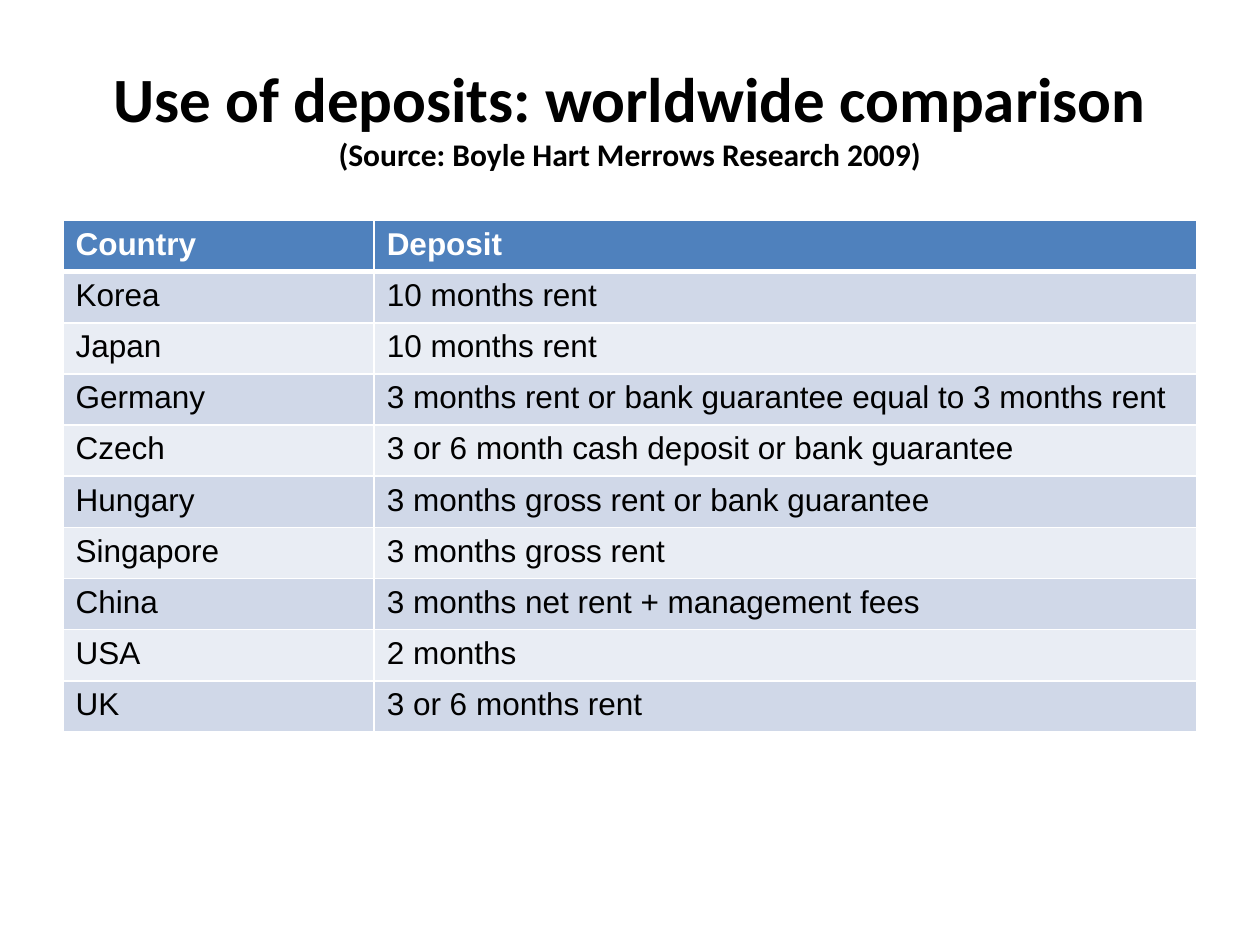
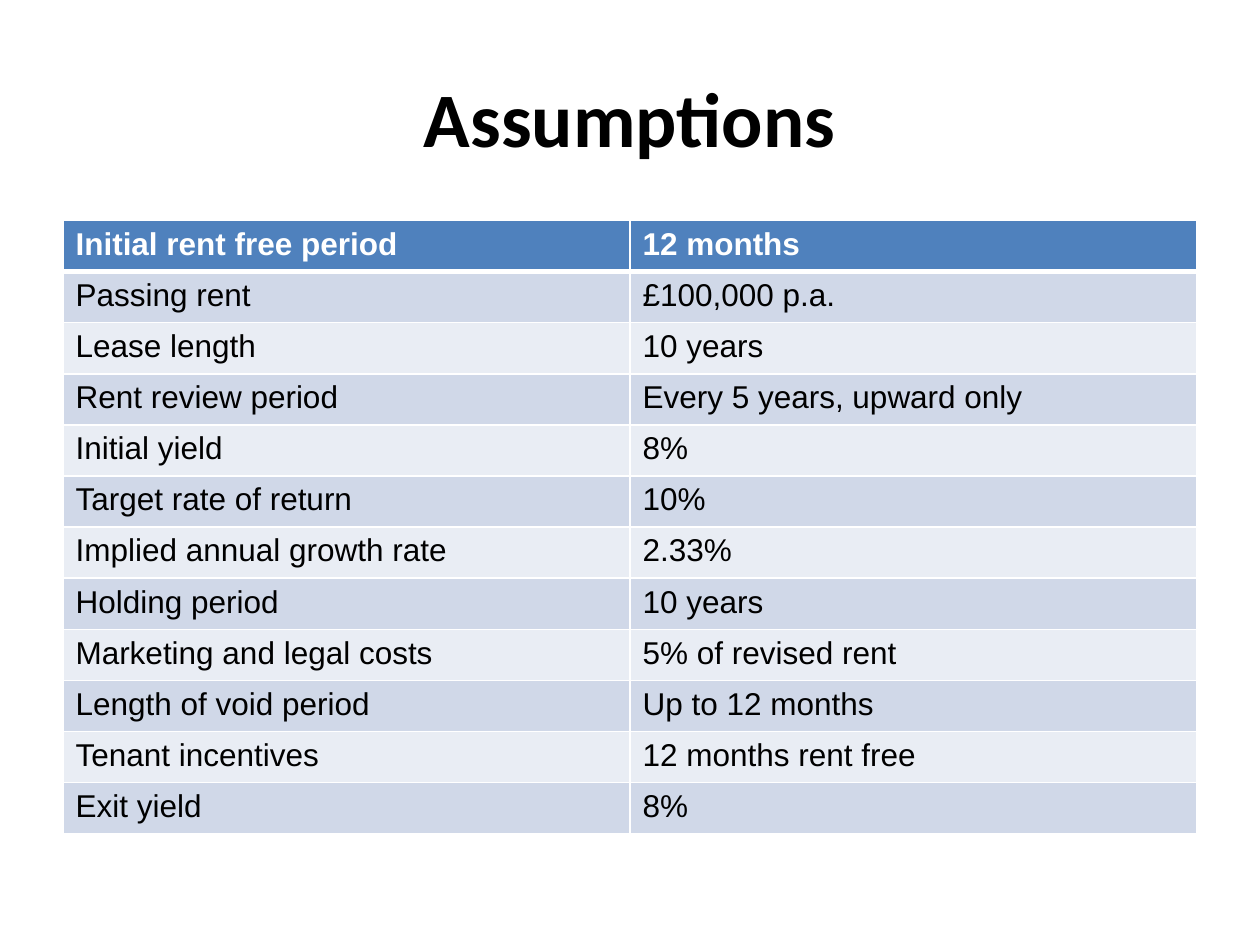
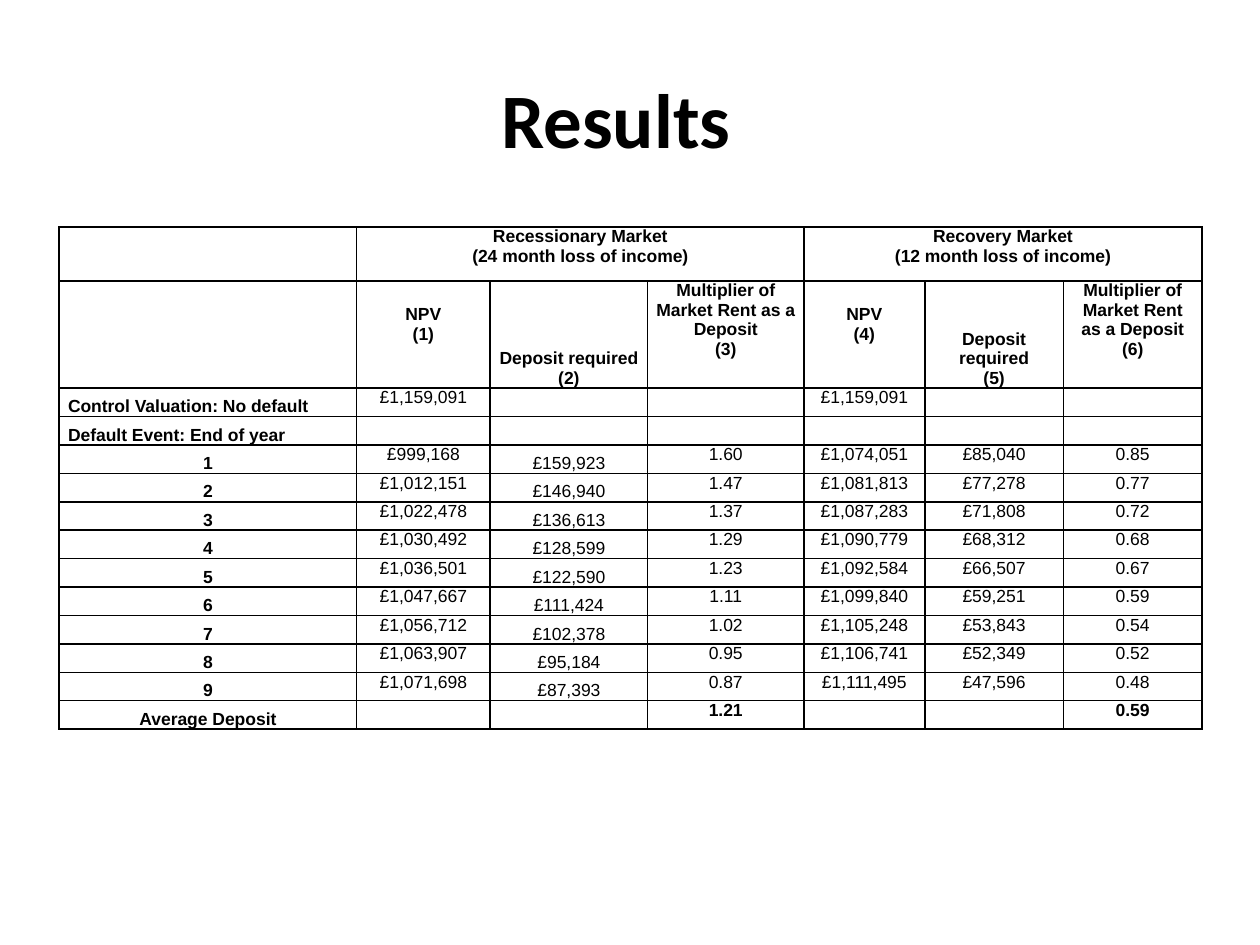
from dataclasses import dataclass

from lxml import etree
from pptx import Presentation
from pptx import util as u
from pptx.dml.color import RGBColor
from pptx.enum import text
from pptx.oxml import ns


@dataclass(frozen=True)
class Theme:
    title_font: str = "Calibri"
    body_font: str = "Arial"
    ink: str = "000000"
    paper: str = "FFFFFF"
    header: str = "4F81BD"
    bands: tuple = ("D0D8E8", "E9EDF4")
    title_size: int = 44
    long_title_size: int = 36
    source_size: int = 18
    list_size: int = 18
    result_size: int = 10
    line: int = 1
    header_line: int = 3


class Deck:
    def __init__(self, theme):
        self.theme = theme
        self.presentation = Presentation()
        self.presentation.slide_width = u.Inches(10)
        self.presentation.slide_height = u.Inches(7.5)
        self.slide = None

    def format_run(self, run, font, size, color, bold):
        run.font.name = font
        run.font.size = u.Pt(size)
        run.font.color.rgb = RGBColor.from_string(color)
        run.font.bold = bold

    def add_slide(self, title, sizes, left=0.5, top=0.3):
        layout = self.presentation.slide_layouts.get_by_name("Title Only")
        self.slide = self.presentation.slides.add_slide(layout)
        shape = self.slide.shapes.title
        shape.left, shape.top = u.Inches(left), u.Inches(top)
        shape.width, shape.height = u.Inches(9), u.Inches(1.25)
        shape.text_frame.text = title
        shape.text_frame.vertical_anchor = text.MSO_ANCHOR.MIDDLE
        paragraph = shape.text_frame.paragraphs[0]
        paragraph.alignment = text.PP_ALIGN.CENTER
        for run, size in zip(paragraph.runs, sizes):
            self.format_run(run, self.theme.title_font, size, self.theme.ink, True)

    def add_table(self, row_count, widths, left, top, height):
        frame = self.slide.shapes.add_table(
            row_count, len(widths), u.Inches(left), u.Inches(top),
            u.Inches(sum(widths)), u.Inches(height))
        for column, width in zip(frame.table.columns, widths):
            column.width = u.Inches(width)
        return frame.table

    def set_borders(self, cell, color, bottom_width=None):
        properties = cell._tc.get_or_add_tcPr()
        for side in "LRTB":
            width = bottom_width if side == "B" and bottom_width else self.theme.line
            line = etree.SubElement(properties, ns.qn(f"a:ln{side}"), w=str(u.Pt(width)))
            fill = etree.SubElement(line, ns.qn("a:solidFill"))
            etree.SubElement(fill, ns.qn("a:srgbClr"), val=color)

    def write_cell(self, cell, content, size, color, bold, alignment):
        cell.text_frame.text = content
        for paragraph in cell.text_frame.paragraphs:
            paragraph.alignment = alignment
            for run in paragraph.runs:
                self.format_run(run, self.theme.body_font, size, color, bold)
            if not paragraph.runs:
                etree.SubElement(paragraph._p, ns.qn("a:endParaRPr"), sz=str(size * 100))

    def add_banded_table(self, rows, widths, height):
        theme = self.theme
        table = self.add_table(len(rows), widths, 0.5, 1.75, height)
        for row_index, row in enumerate(rows):
            is_header = row_index == 0
            fill = theme.header if is_header else theme.bands[(row_index - 1) % 2]
            for column_index, content in enumerate(row):
                cell = table.cell(row_index, column_index)
                self.set_borders(cell, theme.paper, theme.header_line if is_header else None)
                cell.fill.solid()
                cell.fill.fore_color.rgb = RGBColor.from_string(fill)
                self.write_cell(cell, content, theme.list_size,
                                theme.paper if is_header else theme.ink,
                                is_header, text.PP_ALIGN.LEFT)

    def add_results_table(self, rows, widths, height, header_heights):
        table = self.add_table(len(rows), widths, 0.47, 1.8, height)
        body_height = (height - sum(header_heights)) / (len(rows) - len(header_heights))
        for row_index, row in enumerate(rows):
            is_header = row_index < len(header_heights)
            is_last = row_index == len(rows) - 1
            table.rows[row_index].height = u.Inches(
                header_heights[row_index] if is_header else body_height)
            for column_index, content in enumerate(row):
                cell = table.cell(row_index, column_index)
                self.set_borders(cell, self.theme.ink)
                cell.fill.background()
                cell.margin_left = cell.margin_right = u.Inches(0.07)
                cell.margin_top = u.Inches(0.19 if content.startswith("NPV") else 0)
                cell.margin_bottom = 0
                is_low = (content.startswith("Deposit required") or column_index == 0
                          or (column_index == 2 and not is_header))
                cell.vertical_anchor = text.MSO_ANCHOR.BOTTOM if is_low else text.MSO_ANCHOR.TOP
                is_label = ":" in content
                self.write_cell(cell, content, self.theme.result_size, self.theme.ink,
                                is_header or is_last or column_index == 0,
                                text.PP_ALIGN.LEFT if is_label else text.PP_ALIGN.CENTER)
        for first in (1, 4):
            table.cell(0, first).merge(table.cell(0, first + 2))


DEPOSITS = [
    ("Country", "Deposit"),
    ("Korea", "10 months rent"),
    ("Japan", "10 months rent"),
    ("Germany", "3 months rent or bank guarantee equal to 3 months rent"),
    ("Czech", "3 or 6 month cash deposit or bank guarantee"),
    ("Hungary", "3 months gross rent or bank guarantee"),
    ("Singapore", "3 months gross rent"),
    ("China", "3 months net rent + management fees"),
    ("USA", "2 months"),
    ("UK", "3 or 6 months rent"),
]

ASSUMPTIONS = [
    ("Initial rent free period", "12 months"),
    ("Passing rent", "£100,000 p.a."),
    ("Lease length", "10 years"),
    ("Rent review period", "Every 5 years, upward only"),
    ("Initial yield", "8%"),
    ("Target rate of return", "10%"),
    ("Implied annual growth rate", "2.33%"),
    ("Holding period", "10 years"),
    ("Marketing and legal costs", "5% of revised rent"),
    ("Length of void period", "Up to 12 months"),
    ("Tenant incentives", "12 months rent free"),
    ("Exit yield", "8%"),
]

MEASURES = ("NPV", "Deposit required", "Multiplier of Market Rent as a Deposit")

RESULTS = [
    ("", "Recessionary Market\n(24 month loss of income)", "", "",
     "Recovery Market\n(12 month loss of income)", "", ""),
    ("", *(f"{name}\n({number})" for number, name in enumerate(MEASURES * 2, 1))),
    ("Control Valuation: No default", "£1,159,091", "", "", "£1,159,091", "", ""),
    ("Default Event: End of year", "", "", "", "", "", ""),
    ("1", "£999,168", "£159,923", "1.60", "£1,074,051", "£85,040", "0.85"),
    ("2", "£1,012,151", "£146,940", "1.47", "£1,081,813", "£77,278", "0.77"),
    ("3", "£1,022,478", "£136,613", "1.37", "£1,087,283", "£71,808", "0.72"),
    ("4", "£1,030,492", "£128,599", "1.29", "£1,090,779", "£68,312", "0.68"),
    ("5", "£1,036,501", "£122,590", "1.23", "£1,092,584", "£66,507", "0.67"),
    ("6", "£1,047,667", "£111,424", "1.11", "£1,099,840", "£59,251", "0.59"),
    ("7", "£1,056,712", "£102,378", "1.02", "£1,105,248", "£53,843", "0.54"),
    ("8", "£1,063,907", "£95,184", "0.95", "£1,106,741", "£52,349", "0.52"),
    ("9", "£1,071,698", "£87,393", "0.87", "£1,111,495", "£47,596", "0.48"),
    ("Average Deposit", "", "", "1.21", "", "", "0.59"),
]


def main():
    theme = Theme()
    deck = Deck(theme)

    deck.add_slide("Use of deposits: worldwide comparison\v"
                   "(Source: Boyle Hart Merrows Research 2009)",
                   (theme.long_title_size, theme.source_size))
    deck.add_banded_table(DEPOSITS, (2.47, 6.53), 4.06)

    deck.add_slide("Assumptions", (theme.title_size,))
    deck.add_banded_table(ASSUMPTIONS, (4.5, 4.5), 4.87)

    deck.add_slide("Results", (theme.title_size,), left=0.39, top=0.31)
    deck.add_results_table(RESULTS, (2.36, 1.06, 1.25, 1.24, 0.96, 1.1, 1.1),
                           3.99, (0.43, 0.85))

    deck.presentation.save("out.pptx")


if __name__ == "__main__":
    main()
